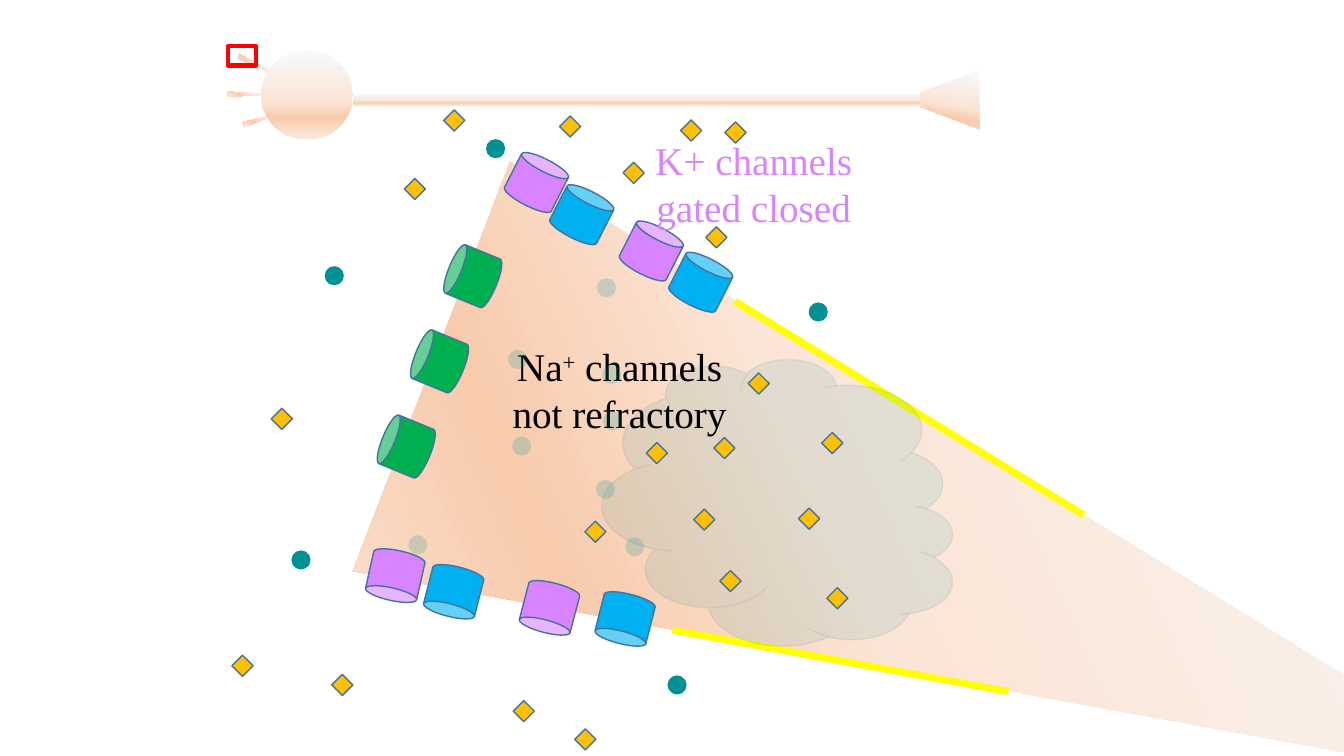
from dataclasses import dataclass
from typing import Any, NamedTuple, Optional

from lxml import etree
from pptx import Presentation
from pptx import util as u
from pptx.dml import color
from pptx.enum import shapes, text
from pptx.oxml import ns

KIND = shapes.MSO_SHAPE


@dataclass(frozen=True)
class Theme:
    font: str = "Times New Roman"
    size: int = 28
    ink: str = "000000"
    edge: str = "43739E"
    sodium: str = "009193"
    potassium: str = "FFC000"
    green: str = "00B050"
    blue: str = "00B0F0"
    violet: str = "D883FF"
    myelin: str = "FFFF00"
    frame: str = "FF0000"
    blend: tuple = ((0, "F7FAFD"), (57, "FBE5D6"), (76, "F8CBAD"), (96, "FBE5D6"))


THEME = Theme()


class Look(NamedTuple):
    kind: Any
    fill: Optional[str] = None
    line: Optional[str] = None
    width: float = 1
    alpha: int = 100
    line_alpha: int = 100


class Place(NamedTuple):
    left: float
    top: float
    wide: float
    high: float
    turn: float = 0


class Flesh(NamedTuple):
    kind: Any
    place: Place
    angle: int


class Label(NamedTuple):
    place: Place
    tint: str
    lines: list


def fade(fill: Any, alpha: int) -> None:
    if alpha < 100:
        tint = fill._xPr.find(".//" + ns.qn("a:srgbClr"))
        etree.SubElement(tint, ns.qn("a:alpha"), val=str(alpha * 1000))


def draw(slide: Any, look: Look, place: Place) -> Any:
    box = [u.Inches(n) for n in place[:4]]
    shape = slide.shapes.add_shape(look.kind, *box)
    shape.rotation = place.turn
    shape.shadow.inherit = False
    if look.fill:
        shape.fill.solid()
        shape.fill.fore_color.rgb = color.RGBColor.from_string(look.fill)
        fade(shape.fill, look.alpha)
    else:
        shape.fill.background()
    if look.line:
        shape.line.color.rgb = color.RGBColor.from_string(look.line)
        shape.line.width = u.Pt(look.width)
        fade(shape.line.fill, look.line_alpha)
    else:
        shape.line.fill.background()
    return shape


def blend(shape: Any, angle: int) -> None:
    old = shape._element.spPr.find(ns.qn("a:noFill"))
    grad = etree.Element(ns.qn("a:gradFill"), rotWithShape="1")
    stops = etree.SubElement(grad, ns.qn("a:gsLst"))
    for pos, tint in THEME.blend:
        stop = etree.SubElement(stops, ns.qn("a:gs"), pos=str(pos * 1000))
        etree.SubElement(stop, ns.qn("a:srgbClr"), val=tint)
    etree.SubElement(grad, ns.qn("a:lin"), ang=str(angle * 60000), scaled="0")
    old.getparent().replace(old, grad)


def spread(slide: Any, look: Look, size: tuple, spots: list) -> None:
    for left, top, *turn in spots:
        draw(slide, look, Place(left, top, *size, *turn))


def stroke(slide: Any, ends: tuple) -> None:
    line = slide.shapes.add_connector(
        shapes.MSO_CONNECTOR.STRAIGHT, *[u.Inches(n) for n in ends])
    line.line.color.rgb = color.RGBColor.from_string(THEME.myelin)
    line.line.width = u.Pt(5)
    etree.SubElement(line._element.spPr, ns.qn("a:effectLst"))


def write(slide: Any, label: Label) -> None:
    box = slide.shapes.add_textbox(*[u.Inches(n) for n in label.place[:4]])
    frame = box.text_frame
    frame.word_wrap = True
    frame.auto_size = text.MSO_AUTO_SIZE.SHAPE_TO_FIT_TEXT
    style = {"name": THEME.font, "size": u.Pt(THEME.size)}
    for row, parts in enumerate(label.lines):
        para = frame.add_paragraph() if row else frame.paragraphs[0]
        para.alignment = text.PP_ALIGN.CENTER
        for part in parts:
            run = para.add_run()
            run.text = part
            for key, value in style.items():
                setattr(run.font, key, value)
            run.font.color.rgb = color.RGBColor.from_string(label.tint)
            if part == "+":
                run._r.get_or_add_rPr().set("baseline", "30000")


FLESH = [
    Flesh(KIND.ISOSCELES_TRIANGLE, Place(7.51, -0.08, 4.35, 11.58, 111), 45),
    *[Flesh(KIND.ISOSCELES_TRIANGLE, Place(left, top, 0.05, 0.49, turn), 45)
      for left, top, turn in [(2.56, 0.42, 116), (2.48, 0.69, 90), (2.62, 0.92, 73)]],
    Flesh(KIND.OVAL, Place(2.59, 0.5, 0.91, 0.88), 90),
    Flesh(KIND.RECTANGLE, Place(3.5, 0.93, 5.64, 0.12), 90),
    Flesh(KIND.TRAPEZOID, Place(9.13, 0.7, 0.58, 0.58, 270), 190),
]
DOT, CAN, GEM = (0.19, 0.19), (0.52, 0.5), (0.21, 0.21)
OUTER = [(3.22, 2.64), (4.82, 1.38), (2.89, 5.46), (6.62, 6.7), (8.02, 3)]
INNER = [(6.2, 5.33), (5.91, 4.76), (4.05, 5.31), (5.92, 2.76),
         (5.08, 4.33), (5.98, 4.08), (5.97, 3.62), (5.04, 3.47)]
GREEN = [(3.77 + 0.33 * n, 4.18 - 0.845 * n, 292.3) for n in range(3)]
BLUE = [(5.51, 1.88, 27), (6.69, 2.55, 27), (5.94, 5.89, 194.2), (4.24, 5.62, 194.2)]
VIOLET = [(5.06, 1.56, 27), (6.2, 2.24, 27), (3.66, 5.46, 192.6), (5.19, 5.78, 194.6)]
MYELIN = [(6.67, 6.25, 10, 6.86), (7.29, 2.99, 10.75, 5.11)]
GEMS = [
    (6.41, 4.39), (5.8, 5.17), (7.14, 5.66), (7.92, 5.04), (7.08, 4.34),
    (7.42, 3.7), (6.88, 5.05), (8.2, 5.83), (8.15, 4.29), (2.69, 4.05),
    (2.3, 6.5), (3.29, 6.69), (5.09, 6.95), (5.7, 7.23), (7, 2.25),
    (7.19, 1.21), (6.18, 1.61), (6.75, 1.19), (5.55, 1.15), (4.4, 1.09),
    (4.01, 1.77),
]
LABELS = [
    Label(Place(5.77, 1.3, 3.41, 1.04), THEME.violet,
          [["K+ channels"], ["gated closed"]]),
    Label(Place(4.69, 3.35, 2.91, 1.04), THEME.ink,
          [["Na", "+", " channels"], ["not refractory"]]),
]


def main() -> None:
    deck = Presentation()
    deck.slide_width, deck.slide_height = u.Inches(13.33), u.Inches(7.5)
    slide = deck.slides.add_slide(deck.slide_layouts[6])
    for part in FLESH:
        shape = draw(slide, Look(part.kind), part.place)
        if part.kind == KIND.TRAPEZOID:
            shape.adjustments[0] = 0.377
        blend(shape, part.angle)
    draw(slide, Look(KIND.RECTANGLE, line=THEME.frame, width=3),
         Place(2.26, 0.46, 0.28, 0.19))
    spread(slide, Look(KIND.OVAL, THEME.sodium), DOT, OUTER)
    for tint, spots in [(THEME.green, GREEN), (THEME.blue, BLUE)]:
        spread(slide, Look(KIND.CAN, tint, THEME.edge), CAN, spots)
    for ends in MYELIN:
        stroke(slide, ends)
    spread(slide, Look(KIND.CAN, THEME.violet, THEME.edge), CAN, VIOLET)
    draw(slide, Look(KIND.CLOUD, THEME.sodium, THEME.edge, alpha=10, line_alpha=10),
         Place(6.3, 3.25, 2.84, 3.48, 90))
    spread(slide, Look(KIND.DIAMOND, THEME.potassium, THEME.edge), GEM, GEMS)
    for label in LABELS:
        write(slide, label)
    spread(slide, Look(KIND.OVAL, THEME.sodium, alpha=20), DOT, INNER)
    deck.save("out.pptx")


if __name__ == "__main__":
    main()
